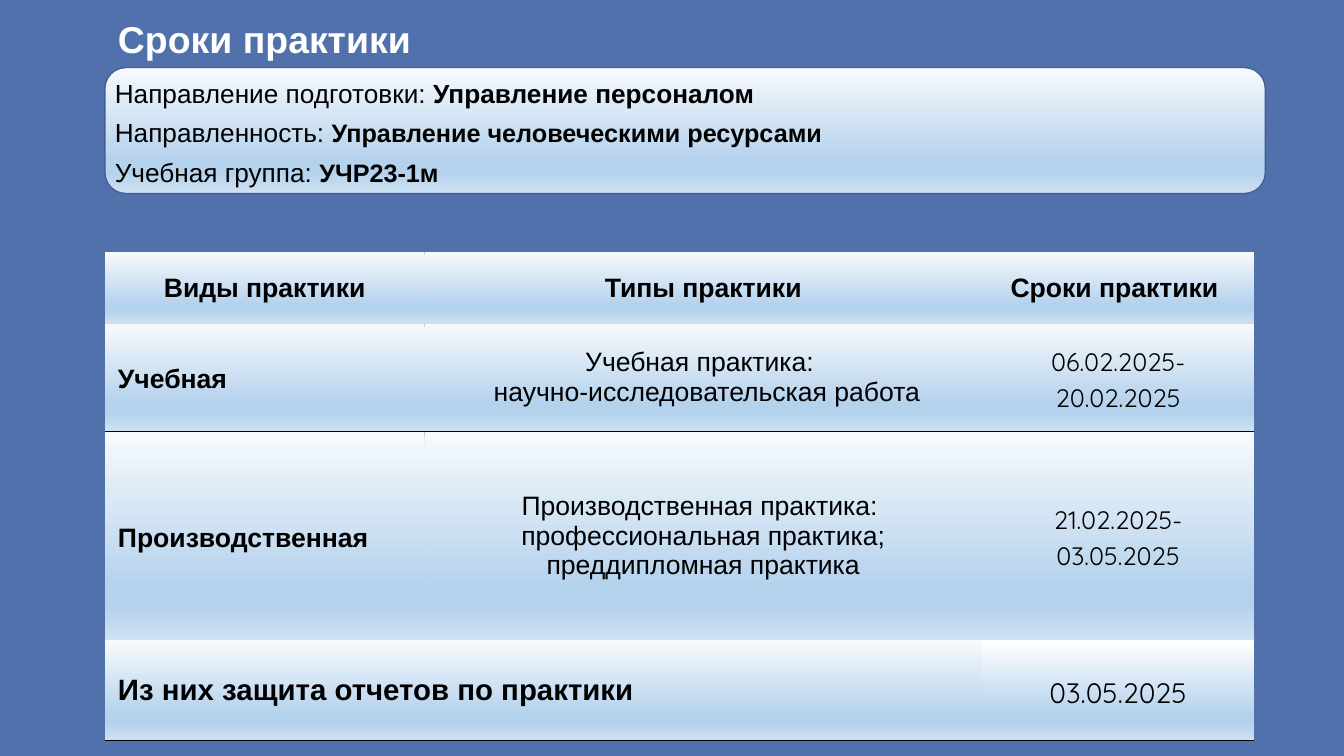
from dataclasses import dataclass

from lxml import etree
from pptx import Presentation
from pptx.dml.color import RGBColor
from pptx.enum import shapes, text
from pptx.oxml.ns import qn
from pptx.util import Inches, Pt

CENTER, LEFT = text.PP_ALIGN.CENTER, text.PP_ALIGN.LEFT
NO_STYLE = "{2D5ABB26-0587-4C30-8999-92F81FD0307C}"
WIDE, NARROW = (0.13,) * 4, (0.1, 0, 0.1, 0)


@dataclass(frozen=True)
class Theme:
    background: str = "5171AC"
    outline: str = "435D9A"
    ink: str = "000000"
    light: str = "FFFFFF"
    gloss: str = "F7FAFD"
    sky: tuple = ((74, "B5D2EC"), (83, "B5D2EC"), (100, "CEE1F2"))
    font: str = "Arial"
    date_font: str = "Quicksand"
    title: float = 26.7
    info: float = 18.7
    info_bold: float = 18
    body: float = 19
    date: float = 18
    defence: float = 21
    defence_date: float = 20


class PracticeSlide:
    """Draws the elements of the practice schedule in one theme."""

    def __init__(self, slide, theme):
        self.slide = slide
        self.theme = theme
        fill = slide.background.fill
        fill.solid()
        fill.fore_color.rgb = RGBColor.from_string(theme.background)

    def gradient(self, fill, properties, top=None):
        fill.gradient()
        fill.gradient_angle = 270
        stops = properties.find(qn("a:gradFill")).find(qn("a:gsLst"))
        for stop in list(stops):
            stops.remove(stop)
        for percent, color in ((0, top or self.theme.gloss), *self.theme.sky):
            stop = etree.SubElement(stops, qn("a:gs"), pos=str(percent * 1000))
            etree.SubElement(stop, qn("a:srgbClr"), val=color)

    def style(self, font, size, color=None, bold=False, name=None):
        font.name = name or self.theme.font
        font.size = Pt(size)
        font.bold = bold
        font.color.rgb = RGBColor.from_string(color or self.theme.ink)

    def panel(self, *box):
        panel = self.slide.shapes.add_shape(
            shapes.MSO_SHAPE.ROUNDED_RECTANGLE, *map(Inches, box))
        panel.shadow.inherit = False
        self.gradient(panel.fill, panel._element.spPr)
        panel.line.color.rgb = RGBColor.from_string(self.theme.outline)
        panel.line.width = Pt(1)

    def textbox(self, *box):
        frame = self.slide.shapes.add_textbox(*map(Inches, box)).text_frame
        frame.word_wrap = True
        return frame

    def title(self, heading, *box):
        frame = self.textbox(*box)
        frame.vertical_anchor = text.MSO_ANCHOR.MIDDLE
        frame.margin_left = frame.margin_right = Inches(0.13)
        frame.margin_top = frame.margin_bottom = Inches(0.13)
        line = frame.paragraphs[0]
        line.text = heading
        line.line_spacing = 1.25
        self.style(line.font, self.theme.title, self.theme.light, True)

    def info(self, facts, *box):
        frame = self.textbox(*box)
        for index, (label, value, size) in enumerate(facts):
            line = frame.add_paragraph() if index else frame.paragraphs[0]
            line.line_spacing = 1.25
            for words, points, bold in ((label, self.theme.info, False), (value, size, True)):
                run = line.add_run()
                run.text = words
                self.style(run.font, points, bold=bold)

    def table(self, left, top, widths, heights):
        frame = self.slide.shapes.add_table(
            len(heights), len(widths), Inches(left), Inches(top),
            Inches(sum(widths)), Inches(sum(heights)))
        table = frame.table
        table.first_row = table.horz_banding = False
        table._tbl.tblPr.find(qn("a:tableStyleId")).text = NO_STYLE
        for column, width in zip(table.columns, widths):
            column.width = Inches(width)
        for row, height in zip(table.rows, heights):
            row.height = Inches(height)
        return table

    def cell(self, cell, words, size, bold=False, name=None, align=CENTER,
             spacing=None, margins=WIDE, border=True, top=None):
        cell.margin_left, cell.margin_top, cell.margin_right, cell.margin_bottom = map(Inches, margins)
        cell.vertical_anchor = text.MSO_ANCHOR.MIDDLE
        cell.text = words
        for line in cell.text_frame.paragraphs:
            line.alignment = align
            line.line_spacing = spacing
            self.style(line.font, size, bold=bold, name=name)
        properties = cell._tc.get_or_add_tcPr()
        self.gradient(cell.fill, properties, top)
        if border:
            edge = etree.Element(qn("a:lnB"), w=str(Pt(1)))
            paint = etree.SubElement(edge, qn("a:solidFill"))
            etree.SubElement(paint, qn("a:srgbClr"), val=self.theme.ink)
            properties.insert(0, edge)


def main():
    deck = Presentation()
    deck.slide_width, deck.slide_height = Inches(13.33), Inches(7.5)
    theme = Theme()
    page = PracticeSlide(deck.slides.add_slide(deck.slide_layouts[6]), theme)
    left = 1.04

    page.panel(left, 0.67, 11.51, 1.25)
    page.title("Сроки практики", left, -0.12, 11.23, 0.89)
    page.info([
        ("Направление подготовки: ", "Управление персоналом", theme.info),
        ("Направленность: ", "Управление человеческими ресурсами", theme.info_bold),
        ("Учебная группа: ", "УЧР23-1м", theme.info_bold),
    ], left, 0.64, 12.83, 1.28)

    schedule = page.table(left, 2.5, (3.17, 5.53, 2.7), (0.71, 1.07, 2.08))
    for column, heading in enumerate(("Виды практики", "Типы практики", "Сроки практики ")):
        page.cell(schedule.cell(0, column), heading, theme.body, True, border=False)
    practices = [
        ("Учебная", "Учебная практика: \n научно-исследовательская работа", "06.02.2025-20.02.2025"),
        ("Производственная",
         "Производственная практика: \nпрофессиональная практика;\nпреддипломная практика",
         "21.02.2025-03.05.2025"),
    ]
    for row, (kind, types, dates) in enumerate(practices, 1):
        page.cell(schedule.cell(row, 0), kind, theme.body, True, align=LEFT, spacing=1.14)
        page.cell(schedule.cell(row, 1), types, theme.body, margins=NARROW)
        page.cell(schedule.cell(row, 2), dates, theme.date, name=theme.date_font, spacing=1.14)

    defence = page.table(left, 6.35, (8.7, 2.7), (1,))
    page.cell(defence.cell(0, 0), "Из них защита отчетов по практики", theme.defence, True, align=LEFT)
    page.cell(defence.cell(0, 1), "03.05.2025", theme.defence_date, name=theme.date_font,
              spacing=1.14, margins=NARROW, top=theme.light)
    deck.save("out.pptx")


if __name__ == "__main__":
    main()
